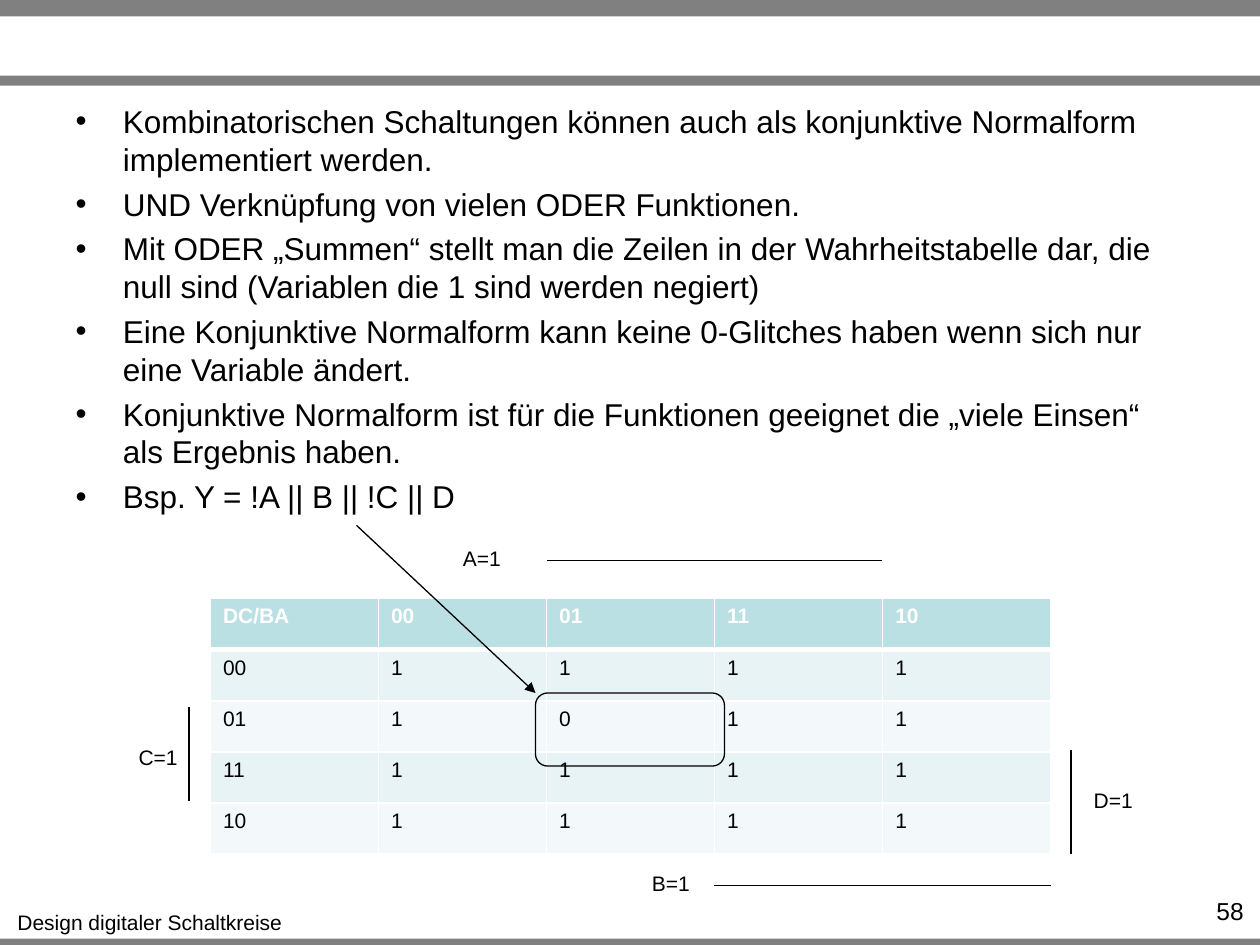
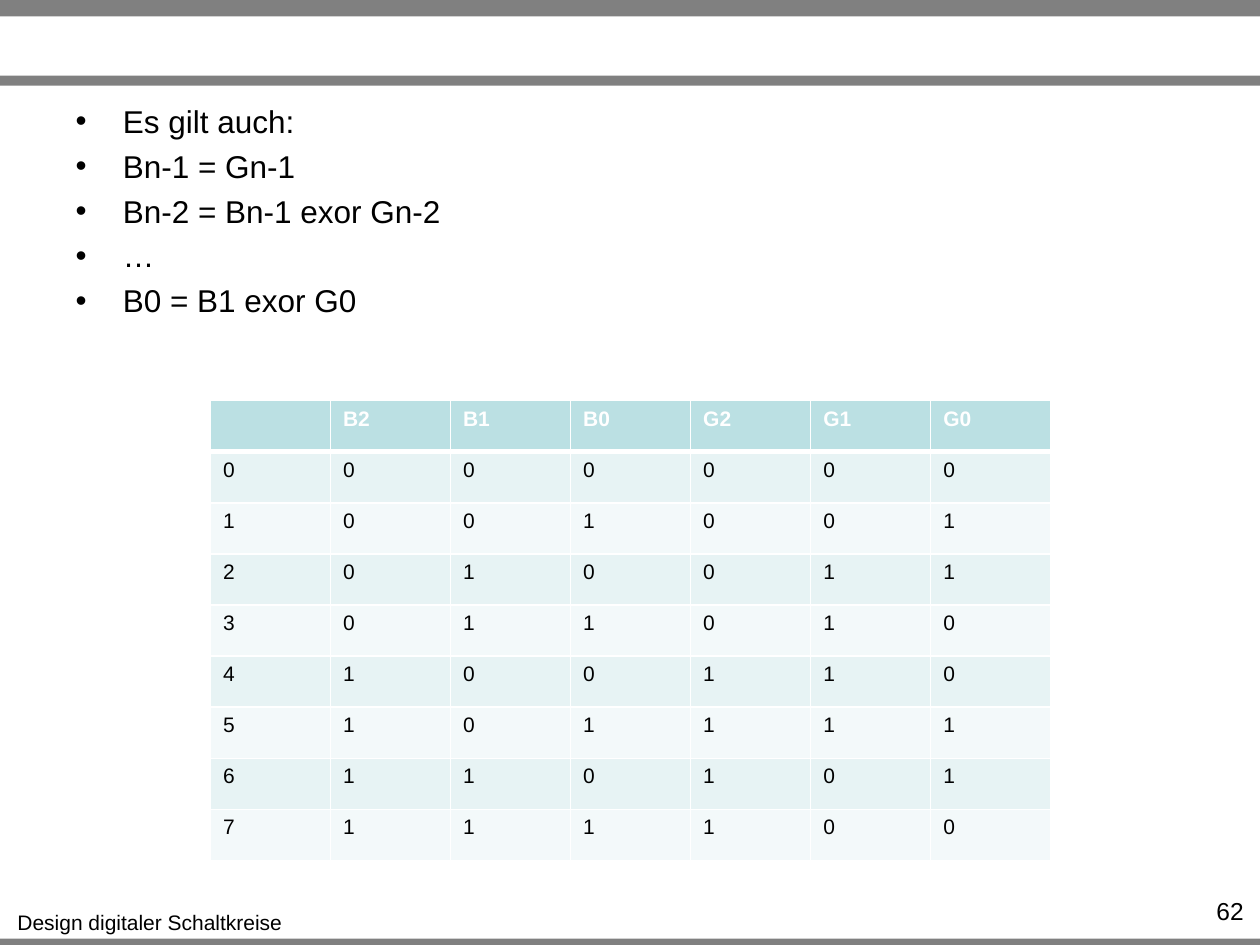
from dataclasses import dataclass

from lxml import etree
from pptx import Presentation
from pptx.dml.color import RGBColor
from pptx.enum.shapes import MSO_CONNECTOR, MSO_SHAPE
from pptx.enum.text import MSO_AUTO_SIZE, PP_ALIGN
from pptx.oxml.ns import qn
from pptx.util import Inches, Pt

STRAIGHT = MSO_CONNECTOR.STRAIGHT
RECTANGLE, ROUNDED = MSO_SHAPE.RECTANGLE, MSO_SHAPE.ROUNDED_RECTANGLE
LEFT, CENTER, RIGHT = PP_ALIGN.LEFT, PP_ALIGN.CENTER, PP_ALIGN.RIGHT
FIXED_SIZE = MSO_AUTO_SIZE.NONE
CONTENT_LAYOUT = 1


@dataclass(frozen=True)
class Theme:
    font: str = "Arial"
    text: str = "000000"
    band: str = "808080"
    header: str = "BBE0E3"
    stripes: tuple = ("E7F3F4", "F3F9FA")
    light: str = "FFFFFF"
    body_size: int = 18
    number_size: int = 14
    small_size: int = 12
    line: float = 0.75
    border: int = 1
    header_border: int = 3


THEME = Theme()

BANDS = [(0, 0.13), (0.6, 0.08), (7.45, 0.08)]  # top, height
FOOTER = "Design digitaler Schaltkreise"
TABLE_LEFT, TABLE_WIDTH = 1.67, 6.67

NORMAL_FORM_POINTS = [
    "Kombinatorischen Schaltungen können auch als konjunktive Normalform implementiert werden.",
    "UND Verknüpfung von vielen ODER Funktionen.",
    "Mit ODER „Summen“ stellt man die Zeilen in der Wahrheitstabelle dar, "
    "die null sind (Variablen die 1 sind werden negiert)",
    "Eine Konjunktive Normalform kann keine 0-Glitches haben wenn sich nur eine Variable ändert.",
    "Konjunktive Normalform ist für die Funktionen geeignet die „viele Einsen“ als Ergebnis haben.",
    "Bsp. Y = !A || B || !C || D",
]
KARNAUGH_MAP = [
    ["DC/BA", "00", "01", "11", "10"],
    ["00", "1", "1", "1", "1"],
    ["01", "1", "0", "1", "1"],
    ["11", "1", "1", "1", "1"],
    ["10", "1", "1", "1", "1"],
]
# Label corner, line start and line end, measured from the corner of the map
VARIABLE_MARKS = {
    "A=1": ((1.9, -0.47), (2.67, -0.3), (5.33, -0.3)),
    "B=1": ((3.4, 2.11), (4, 2.28), (6.67, 2.28)),
    "C=1": ((-0.67, 1.11), (-0.17, 0.86), (-0.17, 1.61)),
    "D=1": ((6.91, 1.45), (6.83, 1.2), (6.83, 2.03)),
}

GRAY_CODE_POINTS = [
    "Es gilt auch:",
    "Bn-1 = Gn-1",
    "Bn-2 = Bn-1 exor Gn-2",
    "…",
    "B0 = B1 exor G0",
]


def gray_code_rows():
    rows = [["", "B2", "B1", "B0", "G2", "G1", "G0"]]
    for number in range(8):
        gray = number ^ number >> 1
        rows.append([str(number), *f"{number:03b}", *f"{gray:03b}"])
    return rows


def color(value):
    return RGBColor.from_string(value)


def style(para, size, align, tint=THEME.text, bold=False):
    para.alignment = align
    font = para.font
    font.name, font.size, font.bold = THEME.font, Pt(size), bold
    font.color.rgb = color(tint)


def add_text(page, box, text, size, align, wrap=False):
    frame = page.shapes.add_textbox(*map(Inches, box)).text_frame
    frame.word_wrap = wrap
    frame.text = text
    style(frame.paragraphs[0], size, align)


def add_line(page, start, end, arrow=False):
    connector = page.shapes.add_connector(STRAIGHT, *map(Inches, (*start, *end)))
    connector.line.width = Pt(THEME.line)
    connector.line.color.rgb = color(THEME.text)
    if arrow:
        etree.SubElement(connector.line._get_or_add_ln(), qn("a:tailEnd"), type="triangle")
    etree.SubElement(connector._element.spPr, qn("a:effectLst"))


def add_frame(page, box):
    """Outline a region with an unfilled rounded rectangle."""
    frame = page.shapes.add_shape(ROUNDED, *map(Inches, box))
    frame.shadow.inherit = False
    frame.fill.background()
    frame.line.width = Pt(THEME.line)
    frame.line.color.rgb = color(THEME.text)


def add_bands(page):
    for top, height in BANDS:
        band = page.shapes.add_shape(RECTANGLE, *map(Inches, (0, top, 10, height)))
        band.shadow.inherit = False
        band.fill.solid()
        band.fill.fore_color.rgb = color(THEME.band)
        band.line.fill.background()


def fill_body(page, points):
    body = page.placeholders[1]
    body.left, body.top, body.width, body.height = map(Inches, (0.5, 0.76, 9, 1.99))
    frame = body.text_frame
    frame.auto_size = FIXED_SIZE
    frame.text = "\n".join(points)
    for index, para in enumerate(frame.paragraphs):
        para.space_before = Pt(4 if index else 0)
        style(para, THEME.body_size, LEFT)


def add_page(deck, number, points):
    """Add a page with bands, footer, page number and bullet list."""
    page = deck.slides.add_slide(deck.slide_layouts[CONTENT_LAYOUT])
    title = page.shapes.title._element
    title.getparent().remove(title)
    add_bands(page)
    add_text(page, (0.03, 7.17, 2.32, 0.3), FOOTER, THEME.small_size, CENTER)
    add_text(page, (9.1, 7.06, 0.87, 0.24), str(number), THEME.number_size, RIGHT, wrap=True)
    fill_body(page, points)
    return page


def set_borders(cell, row):
    widths = {
        "a:lnL": THEME.border,
        "a:lnR": THEME.border,
        "a:lnT": THEME.header_border if row == 1 else THEME.border,
        "a:lnB": THEME.header_border if row == 0 else THEME.border,
    }
    properties = cell._tc.get_or_add_tcPr()
    for side, width in widths.items():
        border = etree.SubElement(properties, qn(side), w=str(Pt(width)))
        solid = etree.SubElement(border, qn("a:solidFill"))
        etree.SubElement(solid, qn("a:srgbClr"), val=THEME.light)


def add_grid(page, box, rows):
    """Add a table of equal cells with a header row and striped rows."""
    left, top, width, height = box
    columns = len(rows[0])
    table = page.shapes.add_table(len(rows), columns, *map(Inches, box)).table
    for column in table.columns:
        column.width = Inches(width / columns)
    for row, values in enumerate(rows):
        table.rows[row].height = Inches(height / len(rows))
        is_header = row == 0
        for column, value in enumerate(values):
            cell = table.cell(row, column)
            set_borders(cell, row)
            cell.fill.solid()
            shade = THEME.header if is_header else THEME.stripes[(row - 1) % 2]
            cell.fill.fore_color.rgb = color(shade)
            cell.text = value
            tint = THEME.light if is_header else THEME.text
            style(cell.text_frame.paragraphs[0], THEME.small_size, LEFT, tint, is_header)


def add_karnaugh_map(page, box):
    """Add the map, its variable marks and the highlighted zero."""
    left, top = box[:2]

    def place(point):
        return left + point[0], top + point[1]

    add_grid(page, box, KARNAUGH_MAP)
    for label, (corner, start, end) in VARIABLE_MARKS.items():
        add_line(page, place(start), place(end))
        add_text(page, (*place(corner), 0.51, 0.3), label, THEME.small_size, CENTER)
    zero_corner = place((2.58, 0.75))
    add_frame(page, (*zero_corner, 1.5, 0.58))
    add_line(page, place((1.16, -0.58)), zero_corner, arrow=True)


def main():
    deck = Presentation()
    deck.slide_width, deck.slide_height = Inches(10), Inches(7.5)

    normal_form = add_page(deck, 58, NORMAL_FORM_POINTS)
    add_karnaugh_map(normal_form, (TABLE_LEFT, 4.75, TABLE_WIDTH, 2.03))

    gray_code = add_page(deck, 62, GRAY_CODE_POINTS)
    add_grid(gray_code, (TABLE_LEFT, 3.18, TABLE_WIDTH, 3.65), gray_code_rows())

    deck.save("out.pptx")


if __name__ == "__main__":
    main()
